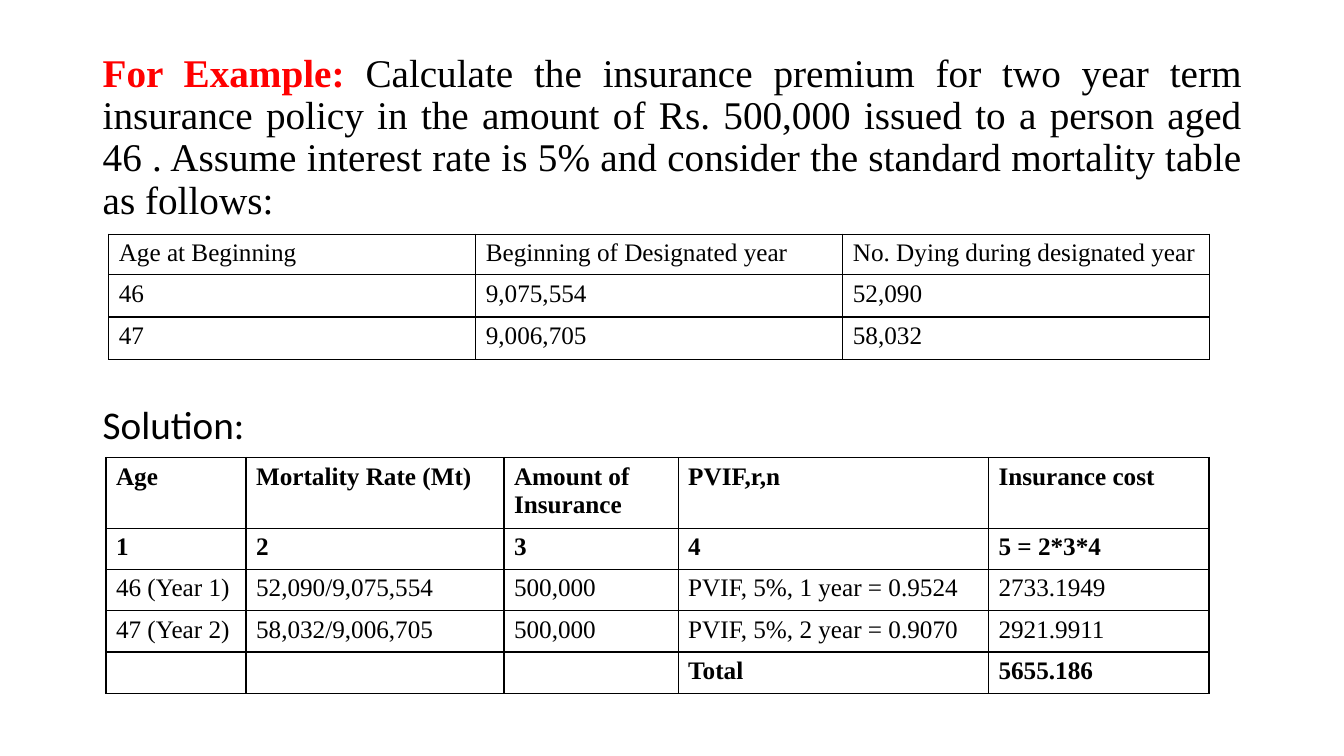
import pptx
import pptx.dml.color
import pptx.enum.text
import pptx.oxml
import pptx.oxml.ns
import pptx.util

Cm = pptx.util.Cm
SERIF = "Times New Roman"
BLACK = "000000"

MORTALITY_ROWS = [
    ["Age at Beginning", "Beginning of Designated year", "No. Dying during designated year"],
    ["46", "9,075,554", "52,090"],
    ["47", "9,006,705", "58,032"],
]
COST_ROWS = [
    ["Age", "Mortality Rate (Mt)", "Amount of Insurance", "PVIF,r,n", "Insurance cost"],
    ["1", "2", "3", "4", "5 = 2*3*4"],
    ["46 (Year 1)", "52,090/9,075,554", "500,000", "PVIF, 5%, 1 year = 0.9524", "2733.1949"],
    ["47 (Year 2)", "58,032/9,006,705", "500,000", "PVIF, 5%, 2 year = 0.9070", "2921.9911"],
    ["", "", "", "Total", "5655.186"],
]
QUESTION = (
    "Calculate the insurance premium for two year term insurance policy in the amount of "
    "Rs. 500,000 issued to a person aged 46 . Assume interest rate is 5% and consider the "
    "standard mortality table as follows:"
)


def color(hex_value):
    """Turn a hex string into a colour."""
    return pptx.dml.color.RGBColor.from_string(hex_value)


def style_font(font, name, size, hex_value=BLACK, bold=False):
    """Apply the text format to a font."""
    text_format = {"name": name, "size": pptx.util.Pt(size), "bold": bold}
    for attribute, value in text_format.items():
        setattr(font, attribute, value)
    font.color.rgb = color(hex_value)


def add_passage(slide, box, runs, alignment):
    """Place one paragraph of 28 pt runs in the given box."""
    frame = slide.shapes.add_textbox(*map(Cm, box)).text_frame
    frame.word_wrap = True
    passage = frame.paragraphs[0]
    passage.alignment = alignment
    passage.line_spacing = 0.9
    for words, name, hex_value, bold in runs:
        run = passage.add_run()
        run.text = words
        style_font(run.font, name, 28, hex_value, bold)


def add_borders(cell):
    """Draw thin black lines on all four sides of a cell."""
    properties = cell._tc.get_or_add_tcPr()
    for side in "LRTB":
        properties.append(pptx.oxml.parse_xml(
            f'<a:ln{side} {pptx.oxml.ns.nsdecls("a")} w="12700"><a:solidFill>'
            f'<a:srgbClr val="{BLACK}"/></a:solidFill></a:ln{side}>'
        ))


def add_grid(slide, left, top, widths, heights, rows, bold_rows=()):
    """Place a bordered table whose size follows its columns and rows."""
    grid = slide.shapes.add_table(
        len(rows), len(widths), Cm(left), Cm(top), Cm(sum(widths)), Cm(sum(heights))
    ).table
    for column, width in zip(grid.columns, widths):
        column.width = Cm(width)
    for row_index, (height, entries) in enumerate(zip(heights, rows)):
        grid.rows[row_index].height = Cm(height)
        for column_index, entry in enumerate(entries):
            cell = grid.cell(row_index, column_index)
            add_borders(cell)
            cell.fill.background()
            cell.text = entry
            style_font(cell.text_frame.paragraphs[0].font, SERIF, 18,
                       bold=row_index in bold_rows)


def add_question(slide, left, top, width):
    """Place the example question and its mortality table."""
    runs = [("For Example: ", SERIF, "FF0000", True), (QUESTION, SERIF, BLACK, False)]
    add_passage(slide, (left, top, width, 4.5), runs, pptx.enum.text.PP_ALIGN.JUSTIFY)
    add_grid(slide, left + 0.4, top + 4.68, [9.25] * 3, [1.02, 1.07, 1.07], MORTALITY_ROWS)


def add_solution(slide, left, top, width):
    """Place the solution heading and its cost table."""
    runs = [("Solution:", "Calibri", BLACK, False)]
    add_passage(slide, (left, top, width, 1.35), runs, pptx.enum.text.PP_ALIGN.LEFT)
    add_grid(slide, left + 0.33, top + 1.43, [3.53, 6.5, 4.39, 7.82, 5.56],
             [1.66] + [1.04] * 4, COST_ROWS, bold_rows=(0, 1, 4))


def main():
    """Build and save the slide."""
    deck = pptx.Presentation()
    deck.slide_width, deck.slide_height = Cm(33.87), Cm(19.05)
    slide = deck.slides.add_slide(deck.slide_layouts[6])
    add_question(slide, 2.34, 1.22, 29.21)
    add_solution(slide, 2.34, 10.1, 29.21)
    deck.save("out.pptx")


if __name__ == "__main__":
    main()
